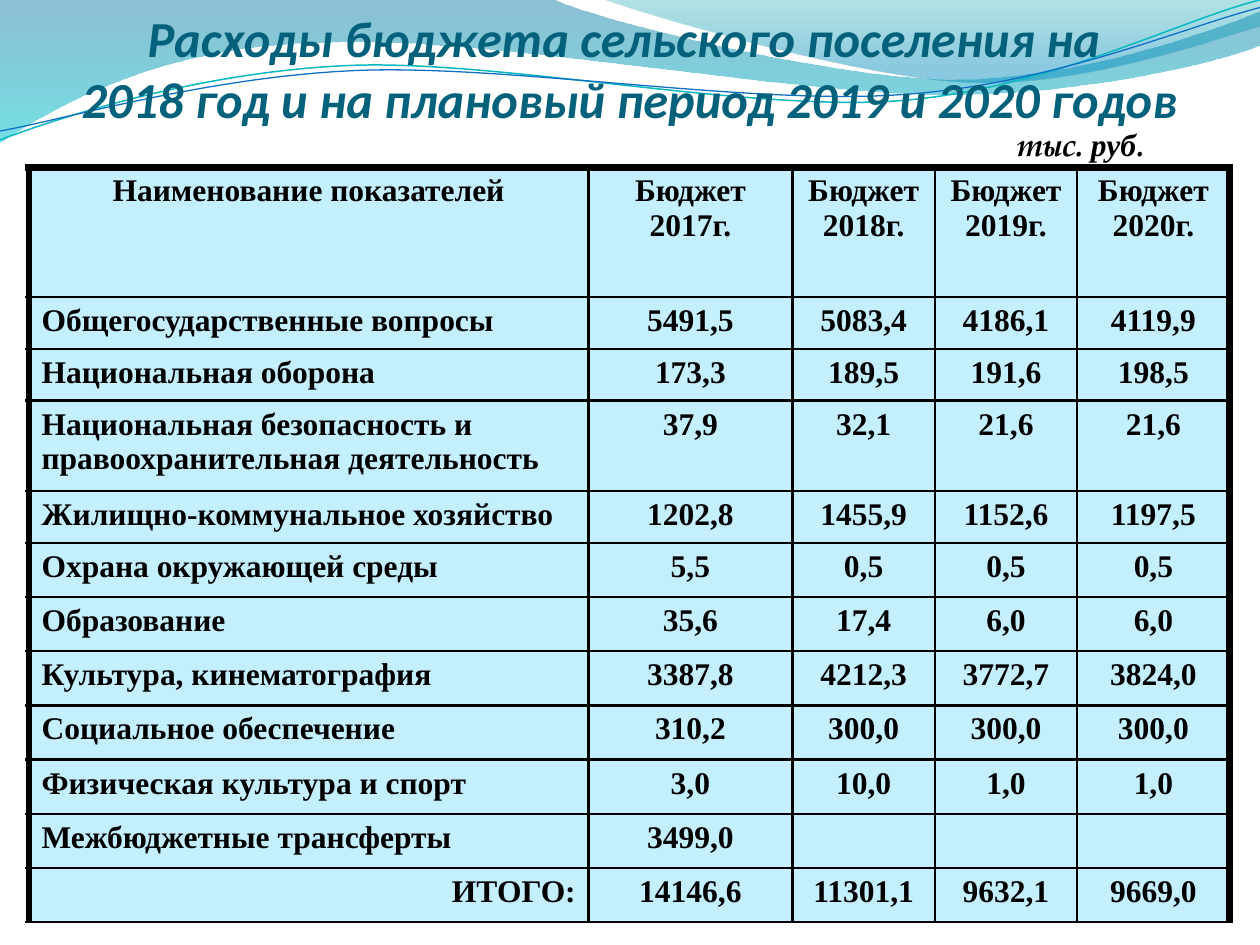
from lxml import etree
from pptx import Presentation
from pptx import util as u
from pptx.dml.color import RGBColor
from pptx.enum import text as t
from pptx.oxml import ns

W, H = 10, 7.5
INK, PALE, TEAL = "000000", "C4EFFF", "04617B"
SERIF, BOOK = "Times New Roman", "TeX Gyre Pagella"
MID, LEFT, RIGHT = t.PP_ALIGN.CENTER, t.PP_ALIGN.LEFT, t.PP_ALIGN.RIGHT

# Each path is a start point, then lines (x, y) or curves (two handles, end).
BANDS = [
    ([(0, 0), (4.4, 0), (4.76, .17, 6.64, .63, 7.58, .63),
      (8.53, .63, 9.58, .26, 10, .09), (10, .36),
      (9.83, .44, 8.7, .76, 7.46, .75), (6.22, .75, 3.82, .28, 2.57, .34),
      (1.29, .36, .46, .83, 0, 1.13)],
     [(0, "0074A1", 45), (1, "00C6CF", 55)]),
    ([(4.79, 0), (5.09, .11, 6.82, .62, 7.69, .65),
      (8.56, .69, 9.61, .32, 10, .21), (10, 0)],
     [(0, "00A1A9", 30), (.8, "008BBF", 45)]),
]
LINES = [
    ([(0, 1.11), (.48, .93, 1.58, .57, 2.77, .52),
      (3.95, .47, 5.93, .89, 7.13, .8), (8.33, .71, 9.38, .15, 10, 0)],
     "0AB8BF", .85),
    ([(0, 1.04), (.47, .96, 1.64, .61, 2.83, .56),
      (4.03, .51, 5.97, .84, 7.17, .75), (8.36, .67, 9.41, .21, 10, .06)],
     "0F6FC6", .75),
]
COLS = [4.44, 1.62, 1.13, 1.13, 1.21]
ROWS = [1.03, .41, .41, .72, .41] + [.43] * 7
DATA = [
    ["Наименование показателей"] + [f"Бюджет {y}г." for y in range(2017, 2021)],
    ["Общегосударственные вопросы", "5491,5", "5083,4", "4186,1", "4119,9"],
    ["Национальная оборона", "173,3", "189,5", "191,6", "198,5"],
    ["Национальная безопасность и правоохранительная деятельность",
     "37,9", "32,1", "21,6", "21,6"],
    ["Жилищно-коммунальное хозяйство", "1202,8", "1455,9", "1152,6", "1197,5"],
    ["Охрана окружающей среды", "5,5", "0,5", "0,5", "0,5"],
    ["Образование", "35,6", "17,4", "6,0", "6,0"],
    ["Культура, кинематография", "3387,8", "4212,3", "3772,7", "3824,0"],
    ["Социальное обеспечение", "310,2", "300,0", "300,0", "300,0"],
    ["Физическая культура и спорт", "3,0", "10,0", "1,0", "1,0"],
    ["Межбюджетные трансферты", "3499,0", "", "", ""],
    ["ИТОГО:", "14146,6", "11301,1", "9632,1", "9669,0"],
]


def hue(code):
    return RGBColor.from_string(code)


def style(font, color=INK, **kit):
    font.color.rgb = hue(color)
    for key, val in kit.items():
        setattr(font, key, val)


def place(shape, box):
    for key, val in zip(("left", "top", "width", "height"), box):
        setattr(shape, key, u.Inches(val))


def draw(slide, path, close):
    """Build the outline from its nodes, then bend the curved sides."""
    path = [[u.Inches(n) for n in seg] for seg in path]
    pen = slide.shapes.build_freeform(*path[0], scale=1.0)
    pen.add_line_segments([seg[-2:] for seg in path[1:]], close=close)
    shape = pen.convert_to_shape()
    shape.shadow.inherit = False
    sides = list(shape._element.iter(ns.qn("a:lnTo")))
    for side, seg in zip(sides, path[1:]):
        if len(seg) == 2:
            continue
        curve = etree.Element(ns.qn("a:cubicBezTo"))
        for x, y in zip(seg[::2], seg[1::2]):
            etree.SubElement(curve, ns.qn("a:pt"),
                             x=str(x - shape.left), y=str(y - shape.top))
        side.getparent().replace(side, curve)
    return shape


def add_waves(slide):
    for path, stops in BANDS:
        band = draw(slide, path, True)
        band.line.fill.background()
        band.fill.gradient()
        band.fill.gradient_angle = 270
        for stop, (pos, code, _) in zip(band.fill.gradient_stops, stops):
            stop.position = pos
            stop.color.rgb = hue(code)
        for tag, (_, _, share) in zip(band._element.iter(ns.qn("a:srgbClr")), stops):
            etree.SubElement(tag, ns.qn("a:alpha"), val=str(share * 1000))
    for path, code, size in LINES:
        line = draw(slide, path, False)
        line.fill.background()
        line.line.color.rgb = hue(code)
        line.line.width = u.Pt(size)


def add_title(slide, box):
    title = slide.shapes.title
    place(title, box)
    slide.shapes._spTree.append(title._element)  # in front of the waves
    frame = title.text_frame
    kit = dict(word_wrap=True, auto_size=t.MSO_AUTO_SIZE.NONE,
               vertical_anchor=t.MSO_ANCHOR.BOTTOM, margin_left=0,
               margin_right=0, margin_top=u.Inches(.05), margin_bottom=0)
    for key, val in kit.items():
        setattr(frame, key, val)
    para = frame.paragraphs[0]
    para.text = ("Расходы бюджета сельского поселения на \v"
                 "2018 год и на плановый период 2019 и 2020 годов")
    para.alignment = MID
    for run in para.runs:
        style(run.font, TEAL, name="Calibri", size=u.Pt(28.8), bold=True, italic=True)


def add_unit(slide, box):
    label = slide.shapes.add_textbox(*map(u.Inches, box))
    label.text_frame.word_wrap = True
    para = label.text_frame.paragraphs[0]
    for word, name in (("тыс. ", BOOK), ("руб", SERIF), (".", BOOK)):
        run = para.add_run()
        run.text = word
        style(run.font, name=name, size=u.Pt(18), bold=True, italic=True)


def edge(cell, sizes):
    """Draw borders; sizes are points for left, right, top, bottom."""
    props = cell._tc.get_or_add_tcPr()
    for n, (side, size) in enumerate(zip("LRTB", sizes)):
        line = etree.Element(ns.qn(f"a:ln{side}"), w=str(u.Pt(size)))
        fill = etree.SubElement(line, ns.qn("a:solidFill"))
        etree.SubElement(fill, ns.qn("a:srgbClr"), val=INK)
        props.insert(n, line)


def add_budget(slide, box):
    grid = slide.shapes.add_table(len(ROWS), len(COLS), *map(u.Inches, box)).table
    for col, size in zip(grid.columns, COLS):
        col.width = u.Inches(box[2] * size / sum(COLS))
    for row, size in zip(grid.rows, ROWS):
        row.height = u.Inches(box[3] * size / sum(ROWS))
    last = len(COLS) - 1
    for r, row in enumerate(DATA):
        for c, word in enumerate(row):
            cell = grid.cell(r, c)
            cell.fill.solid()
            cell.fill.fore_color.rgb = hue(PALE)
            edge(cell, [4.5 if rim else 1.5
                        for rim in (c == 0, c == last, r == 0, False)])
            para = cell.text_frame.paragraphs[0]
            para.text = word
            para.alignment = MID if c or not r else LEFT
            for run in para.runs:
                style(run.font, name=SERIF, size=u.Pt(18), bold=True)
    grid.cell(len(ROWS) - 1, 0).text_frame.paragraphs[0].alignment = RIGHT


def main():
    deck = Presentation()
    deck.slide_width, deck.slide_height = u.Inches(W), u.Inches(H)
    slide = deck.slides.add_slide(deck.slide_layouts[5])
    add_waves(slide)
    add_title(slide, (0, 0, W, 1.02))
    add_budget(slide, (.23, 1.33, 9.53, 5.99))
    add_unit(slide, (7.97, .94, 1.48, .4))
    deck.save("out.pptx")


if __name__ == "__main__":
    main()
